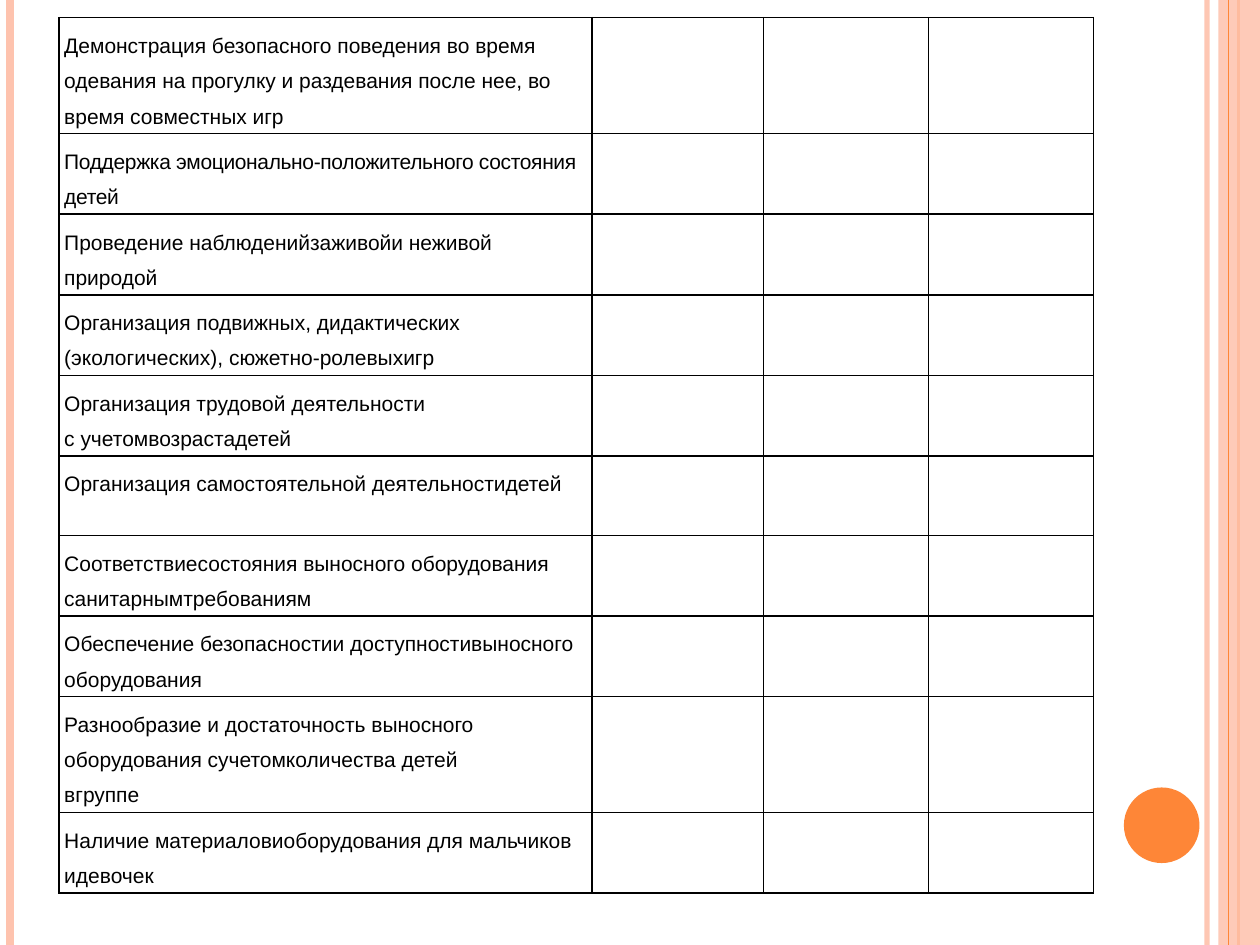
from lxml.etree import SubElement
from pptx import Presentation
from pptx.dml.color import RGBColor
from pptx.enum.shapes import MSO_CONNECTOR, MSO_SHAPE
from pptx.oxml.ns import qn
from pptx.util import Inches, Pt

PEACH = RGBColor(0xFE, 0xC3, 0xAE)
ORANGE = RGBColor(0xFE, 0x86, 0x37)
BLACK = RGBColor(0, 0, 0)

CRITERIA = [
    "Демонстрация безопасного поведения во время одевания на прогулку и раздевания после нее, во время совместных игр",
    "Поддержка эмоционально-положительного состояния детей",
    "Проведение наблюденийзаживойи неживой природой",
    "Организация подвижных, дидактических (экологических), сюжетно-ролевыхигр",
    "Организация трудовой деятельности\nс учетомвозрастадетей",
    "Организация самостоятельной деятельностидетей",
    "Соответствиесостояния выносного оборудования санитарнымтребованиям",
    "Обеспечение безопасностии доступностивыносного оборудования",
    "Разнообразие и достаточность выносного оборудования сучетомколичества детей\nвгруппе",
    "Наличие материаловиоборудования для мальчиков идевочек",
]
TIGHT_ROW = 1
TALL_ROWS = (0, 8)
COLUMN_WIDTHS = [4.23, 1.36, 1.31, 1.31]
ROW_HEIGHTS = [0.9 if i in TALL_ROWS else 0.63 for i in range(len(CRITERIA))]


def set_opacity(color_format_owner, percent):
    for color in color_format_owner.iter(qn("a:srgbClr")):
        SubElement(color, qn("a:alpha"), val=str(percent * 1000))


def add_stripe(x, color, width):
    stripe = slide.shapes.add_connector(
        MSO_CONNECTOR.STRAIGHT, Inches(x), 0, Inches(x), Inches(7.5))
    stripe.line.color.rgb = color
    stripe.line.width = Pt(width)
    SubElement(stripe._element.spPr, qn("a:effectLst"))
    return stripe


prs = Presentation()
prs.slide_width = Inches(10)
prs.slide_height = Inches(7.5)
slide = prs.slides.add_slide(prs.slide_layouts[6])

inner_stripe = add_stripe(9.58, PEACH, 3)
set_opacity(inner_stripe._element.spPr, 93)
add_stripe(0.08, PEACH, 4.5)
add_stripe(9.83, ORANGE, 1.5)

side_band = slide.shapes.add_shape(
    MSO_SHAPE.RECTANGLE, Inches(9.67), 0, Inches(0.33), Inches(7.5))
side_band.fill.solid()
side_band.fill.fore_color.rgb = PEACH
set_opacity(side_band._element.spPr, 87)

add_stripe(9.75, ORANGE, 0.75)

number_disc = slide.shapes.add_shape(
    MSO_SHAPE.OVAL, Inches(8.92), Inches(6.25), Inches(0.6), Inches(0.6))
number_disc.fill.solid()
number_disc.fill.fore_color.rgb = ORANGE
for decoration in (side_band, number_disc):
    decoration.line.fill.background()
    decoration.shadow.inherit = False

checklist = slide.shapes.add_table(
    len(CRITERIA), len(COLUMN_WIDTHS), Inches(0.47), Inches(0.14),
    Inches(sum(COLUMN_WIDTHS)), Inches(sum(ROW_HEIGHTS))).table
checklist.first_row = False
checklist.horz_banding = False
for column, width in zip(checklist.columns, COLUMN_WIDTHS):
    column.width = Inches(width)
for row, height in zip(checklist.rows, ROW_HEIGHTS):
    row.height = Inches(height)

for cell in checklist.iter_cells():
    cell.margin_left = cell.margin_right = Inches(0.04)
    cell.margin_top = cell.margin_bottom = Inches(0.04)
    properties = cell._tc.get_or_add_tcPr()
    for side in ("a:lnL", "a:lnR", "a:lnT", "a:lnB"):
        border = SubElement(properties, qn(side), w=str(Pt(1)))
        border_fill = SubElement(border, qn("a:solidFill"))
        SubElement(border_fill, qn("a:srgbClr"), val=str(BLACK))
    cell.fill.background()

for i, criterion in enumerate(CRITERIA):
    criterion_frame = checklist.cell(i, 0).text_frame
    criterion_frame.text = criterion
    for paragraph in criterion_frame.paragraphs:
        paragraph.line_spacing = 1.5
        for run in paragraph.runs:
            run.font.name = "Arial"
            run.font.size = Pt(12)
            run.font.color.rgb = BLACK
            if i == TIGHT_ROW:
                run._r.get_or_add_rPr().set("spc", "-20")

prs.save("out.pptx")
